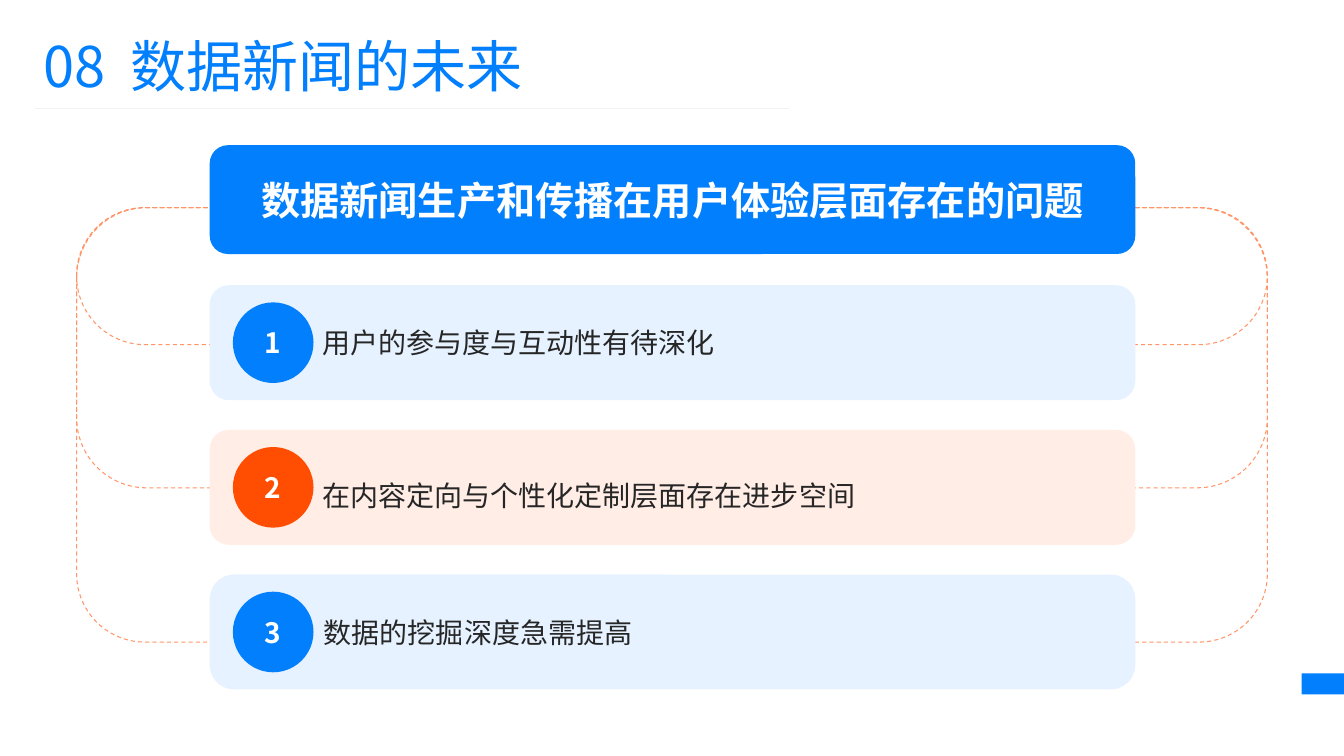
from pptx import Presentation
from pptx.dml.color import RGBColor
from pptx.enum.dml import MSO_LINE
from pptx.enum.shapes import MSO_CONNECTOR, MSO_SHAPE
from pptx.enum.text import MSO_ANCHOR, MSO_AUTO_SIZE, PP_ALIGN
from pptx.oxml import parse_xml
from pptx.oxml.ns import nsdecls
from pptx.util import Inches, Pt

BLUE = RGBColor(0x02, 0x7F, 0xFD)
PALE_BLUE = RGBColor(0xE6, 0xF2, 0xFF)
ORANGE = RGBColor(0xFF, 0x4E, 0x01)
PALE_ORANGE = RGBColor(0xFF, 0xED, 0xE6)
LOOP = RGBColor(0xFF, 0x95, 0x67)
RULE = RGBColor(0xF2, 0xF2, 0xF2)
INK = RGBColor(0x26, 0x26, 0x26)
WHITE = RGBColor(0xFF, 0xFF, 0xFF)
FONT = "Noto Sans CJK SC"

NUMBER, TITLE = "08", "数据新闻的未来"
HEADING = "数据新闻生产和传播在用户体验层面存在的问题"
# text, badge colour, card colour, corner, line spacing
CARDS = [
    ("用户的参与度与互动性有待深化", BLUE, PALE_BLUE, 0.167, 1),
    ("在内容定向与个性化定制层面存在进步空间", ORANGE, PALE_ORANGE, 0.167, 1.5),
    ("数据的挖掘深度急需提高", BLUE, PALE_BLUE, 0.215, 1),
]
# Height and corner of the dashed loops that tie the heading to each card
LOOPS = [(1.36, 0.5), (2.78, 0.25), (4.31, 0.157)]

WIDTH, HEIGHT = 13.33, 7.5
CARD_W, CARD_H, CARD_TOP, CARD_STEP = 9.18, 1.14, 2.83, 1.435
CARD_X = 2.08
BADGE = 0.8
BADGE_X = 2.31
LOOP_X, LOOP_TOP, LOOP_W = 0.76, 2.06, 11.81


def add_run(p, text, size, color, bold=False):
    r = p.add_run()
    r.text = text
    for name, value in {"size": Pt(size), "bold": bold, "name": FONT}.items():
        setattr(r.font, name, value)
    r.font.color.rgb = color
    r.font._element.append(parse_xml(f'<a:ea {nsdecls("a")} typeface="{FONT}"/>'))
    return r


def add_box(s, kind, x, y, w, h, fill=None, corner=None):
    """Add a flat shape without outline; no fill if none is given."""
    sp = s.shapes.add_shape(kind, Inches(x), Inches(y), Inches(w), Inches(h))
    sp.shadow.inherit = False
    sp.line.fill.background()
    if fill is None:
        sp.fill.background()
    else:
        sp.fill.solid()
        sp.fill.fore_color.rgb = fill
    if corner is not None:
        sp.adjustments[0] = corner
    return sp


def write(sp, text, size, color, bold=False, align=PP_ALIGN.CENTER, spacing=1):
    tf = sp.text_frame
    tf.vertical_anchor = MSO_ANCHOR.MIDDLE
    p = tf.paragraphs[0]
    p.alignment = align
    p.line_spacing = spacing
    add_run(p, text, size, color, bold)
    return tf


def add_title(s):
    title = s.shapes.title
    box = {"left": 0.33, "top": 0.26, "width": 7.68, "height": 0.77}
    for name, value in box.items():
        setattr(title, name, Inches(value))
    tf = write(title, NUMBER, 40, BLUE, align=PP_ALIGN.LEFT)
    tf.word_wrap = True
    tf.auto_size = MSO_AUTO_SIZE.NONE
    p = tf.paragraphs[0]
    gap = add_run(p, " ", 40, BLUE)
    gap.font._element.set("spc", "900")
    add_run(p, TITLE, 40, BLUE)

    rule = s.shapes.add_connector(MSO_CONNECTOR.STRAIGHT, Inches(0.35),
                                  Inches(1.08), Inches(7.83), Inches(1.08))
    rule.line.color.rgb = RULE
    rule.line.width = Pt(0.5)
    rule._element.spPr.append(parse_xml(f'<a:effectLst {nsdecls("a")}/>'))


def add_loops(s):
    for height, corner in LOOPS:
        loop = add_box(s, MSO_SHAPE.ROUNDED_RECTANGLE, LOOP_X, LOOP_TOP,
                       LOOP_W, height, corner=corner)
        loop.line.color.rgb = LOOP
        loop.line.width = Pt(0.75)
        loop.line.dash_style = MSO_LINE.DASH


def add_cards(s):
    for i, (text, color, pale, corner, spacing) in enumerate(CARDS):
        y = CARD_TOP + i * CARD_STEP
        card = add_box(s, MSO_SHAPE.ROUNDED_RECTANGLE, CARD_X, y,
                       CARD_W, CARD_H, pale, corner)
        tf = write(card, text, 20, INK, align=PP_ALIGN.LEFT, spacing=spacing)
        tf.margin_left = Inches(1.06)
        badge = add_box(s, MSO_SHAPE.OVAL, BADGE_X, y + (CARD_H - BADGE) / 2,
                        BADGE, BADGE, color)
        write(badge, str(i + 1), 20, WHITE, bold=True).word_wrap = False


def main():
    prs = Presentation()
    prs.slide_width, prs.slide_height = Inches(WIDTH), Inches(HEIGHT)
    s = prs.slides.add_slide(prs.slide_layouts[5])
    add_box(s, MSO_SHAPE.RECTANGLE, WIDTH - 0.42, 6.68, 0.42, 0.21, BLUE)
    add_title(s)
    add_loops(s)
    add_cards(s)
    heading = add_box(s, MSO_SHAPE.ROUNDED_RECTANGLE, CARD_X, 1.44,
                      CARD_W, 1.08, BLUE, 0.167)
    write(heading, HEADING, 28, WHITE, bold=True)
    prs.save("out.pptx")


if __name__ == "__main__":
    main()
